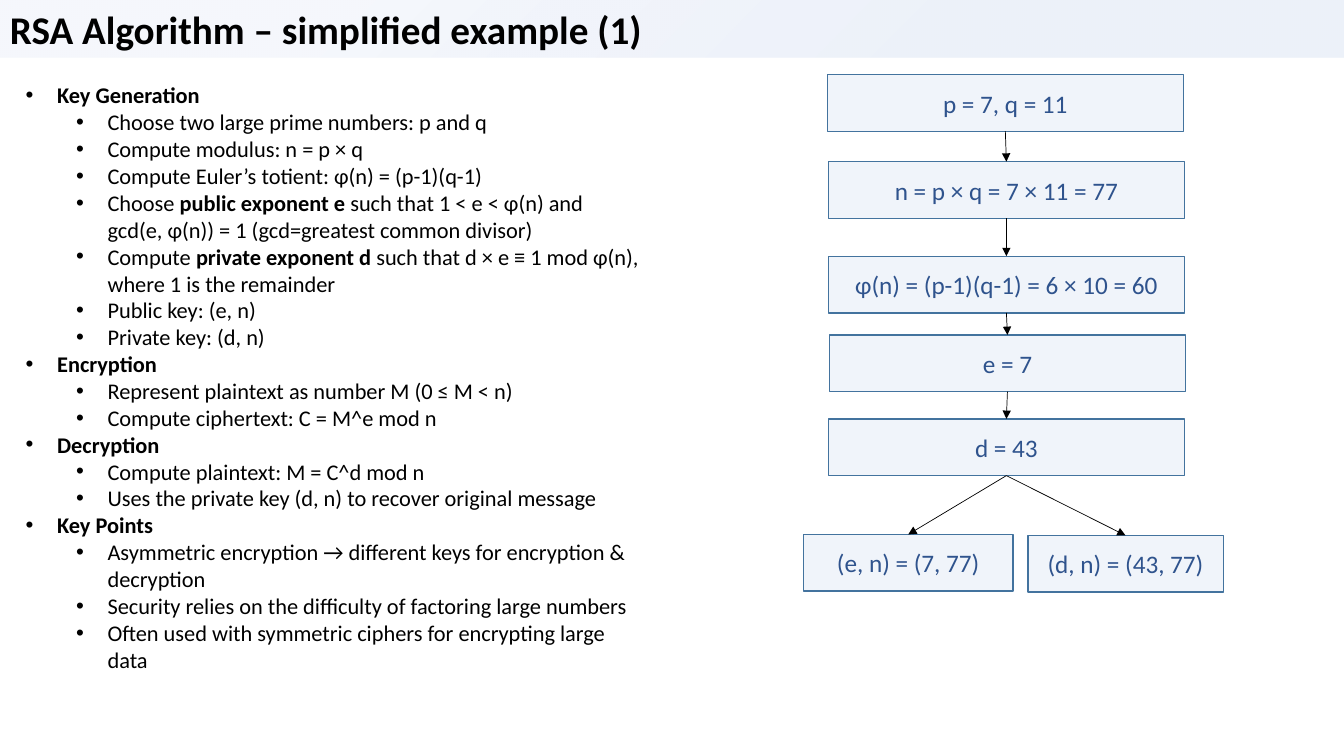
from lxml import etree
from pptx import Presentation
from pptx.dml.color import RGBColor
from pptx.enum.shapes import MSO_CONNECTOR, MSO_SHAPE
from pptx.enum.text import MSO_ANCHOR, PP_ALIGN
from pptx.oxml import parse_xml
from pptx.oxml.ns import nsdecls, qn
from pptx.util import Emu, Pt

RECTANGLE = MSO_SHAPE.RECTANGLE
STRAIGHT = MSO_CONNECTOR.STRAIGHT
LEFT, CENTER = PP_ALIGN.LEFT, PP_ALIGN.CENTER
TOP, MIDDLE = MSO_ANCHOR.TOP, MSO_ANCHOR.MIDDLE
EMU_PER_PX = 9525
TOP_SIDE, BOTTOM_SIDE = 0, 2
FONT = "Calibri"
BLACK, BOX_FILL, BOX_LINE, BOX_TEXT = "000000", "F0F4FA", "43739E", "2F538D"
BOX_HEIGHT, STEP_WIDTH = 54, 339
HANGING = 30

TITLE = "RSA Algorithm – simplified example (1)"
SECTIONS = {
    "Key Generation": [
        "Choose two large prime numbers: p and q",
        "Compute modulus: n = p × q",
        "Compute Euler’s totient: φ(n) = (p-1)(q-1)",
        "Choose **public exponent e** such that 1 < e < φ(n) and "
        "gcd(e, φ(n)) = 1 (gcd=greatest common divisor)",
        "Compute **private exponent d** such that d × e ≡ 1 mod φ(n), "
        "where 1 is the remainder",
        "Public key: (e, n)",
        "Private key: (d, n)",
    ],
    "Encryption": [
        "Represent plaintext as number M (0 ≤ M < n)",
        "Compute ciphertext: C = M^e mod n",
    ],
    "Decryption": [
        "Compute plaintext: M = C^d mod n",
        "Uses the private key (d, n) to recover original message",
    ],
    "Key Points": [
        "Asymmetric encryption → different keys for encryption & decryption",
        "Security relies on the difficulty of factoring large numbers",
        "Often used with symmetric ciphers for encrypting large data",
    ],
}
STEPS = [
    ("p = 7, q = 11", 788, 71),
    ("n = p × q = 7 × 11 = 77", 789, 154),
    ("φ(n) = (p-1)(q-1) = 6 × 10 = 60", 789, 244),
    ("e = 7", 790, 319),
    ("d = 43", 789, 399),
]
KEYS = [
    ("(e, n) = (7, 77)", 765, 509, 200),
    ("(d, n) = (43, 77)", 979, 510, 186),
]


def px(length):
    """Turn pixels into EMU."""
    return Emu(length * EMU_PER_PX)


def color(value):
    """Turn a hex string into a colour."""
    return RGBColor.from_string(value)


def style_font(font, size, hex_color, bold=False):
    """Set the face, size, colour and weight of a font."""
    font.name = FONT
    font.size = Pt(size)
    font.bold = bold
    font.color.rgb = color(hex_color)


def add_rectangle(slide, text, left, top, width, height):
    """Add a shadowless rectangle holding one line of text."""
    shape = slide.shapes.add_shape(RECTANGLE, px(left), px(top), px(width), px(height))
    shape.shadow.inherit = False
    shape.text_frame.text = text
    return shape


def add_title_bar(slide):
    """Add the title on its translucent gradient bar."""
    shape = add_rectangle(slide, TITLE, 0, 0, 1280, 55)
    shape.line.fill.background()
    shape.fill.background()
    stops = "".join(
        f'<a:gs pos="{position}000"><a:srgbClr val="4472C4">'
        f'<a:alpha val="{alpha}000"/></a:srgbClr></a:gs>'
        for position, alpha in ((26, 10), (76, 5))
    )
    gradient = parse_xml(
        f'<a:gradFill {nsdecls("a")} rotWithShape="1"><a:gsLst>{stops}</a:gsLst>'
        '<a:path path="circle"><a:fillToRect l="100000" t="100000"/></a:path></a:gradFill>'
    )
    properties = shape._element.spPr
    properties.replace(properties.find(qn("a:noFill")), gradient)
    frame = shape.text_frame
    frame.vertical_anchor = TOP
    paragraph = frame.paragraphs[0]
    paragraph.alignment = LEFT
    style_font(paragraph.runs[0].font, 28, BLACK, bold=True)


def add_bullet(paragraph, text, level):
    """Fill a bulleted paragraph, with bold parts between double asterisks."""
    paragraph.level = level
    properties = paragraph._p.get_or_add_pPr()
    properties.set("marL", str(px(HANGING + 48 * level)))
    properties.set("indent", str(px(-HANGING)))
    etree.SubElement(properties, qn("a:buFont")).set("typeface", "Arial")
    etree.SubElement(properties, qn("a:buChar")).set("char", "•")
    for index, part in enumerate(text.split("**")):
        run = paragraph.add_run()
        run.text = part
        style_font(run.font, 16, BLACK, bold=level == 0 or index % 2 == 1)


def add_outline(slide):
    """Add the bulleted sections on the left."""
    frame = slide.shapes.add_textbox(px(15), px(73), px(605), px(578)).text_frame
    frame.word_wrap = True
    bullets = []
    for heading, points in SECTIONS.items():
        bullets += [(heading, 0)] + [(point, 1) for point in points]
    for index, (text, level) in enumerate(bullets):
        paragraph = frame.add_paragraph() if index else frame.paragraphs[0]
        add_bullet(paragraph, text, level)


def add_box(slide, text, left, top, width=STEP_WIDTH):
    """Add one box of the flow chart."""
    shape = add_rectangle(slide, text, left, top, width, BOX_HEIGHT)
    shape.fill.solid()
    shape.fill.fore_color.rgb = color(BOX_FILL)
    shape.line.color.rgb = color(BOX_LINE)
    shape.line.width = Pt(1)
    frame = shape.text_frame
    frame.vertical_anchor = MIDDLE
    paragraph = frame.paragraphs[0]
    paragraph.alignment = CENTER
    style_font(paragraph.runs[0].font, 18, BOX_TEXT)
    return shape


def add_arrow(slide, upper, lower):
    """Join the bottom of one box to the top of another."""
    arrow = slide.shapes.add_connector(STRAIGHT, 0, 0, 0, 0)
    arrow.begin_connect(upper, BOTTOM_SIDE)
    arrow.end_connect(lower, TOP_SIDE)
    arrow.line.color.rgb = color(BLACK)
    arrow.line.width = Pt(0.5)
    etree.SubElement(arrow.line._get_or_add_ln(), qn("a:tailEnd")).set("type", "triangle")
    etree.SubElement(arrow._element.spPr, qn("a:effectLst"))


def add_flow_chart(slide):
    """Add the worked example, ending in the two keys."""
    steps = [add_box(slide, *step) for step in STEPS]
    keys = [add_box(slide, *key) for key in KEYS]
    for upper, lower in zip(steps, steps[1:]):
        add_arrow(slide, upper, lower)
    for key in keys:
        add_arrow(slide, steps[-1], key)


def main():
    """Build and save the slide."""
    presentation = Presentation()
    presentation.slide_width = px(1280)
    presentation.slide_height = px(720)
    slide = presentation.slides.add_slide(presentation.slide_layouts[6])
    add_title_bar(slide)
    add_outline(slide)
    add_flow_chart(slide)
    presentation.save("out.pptx")


if __name__ == "__main__":
    main()
